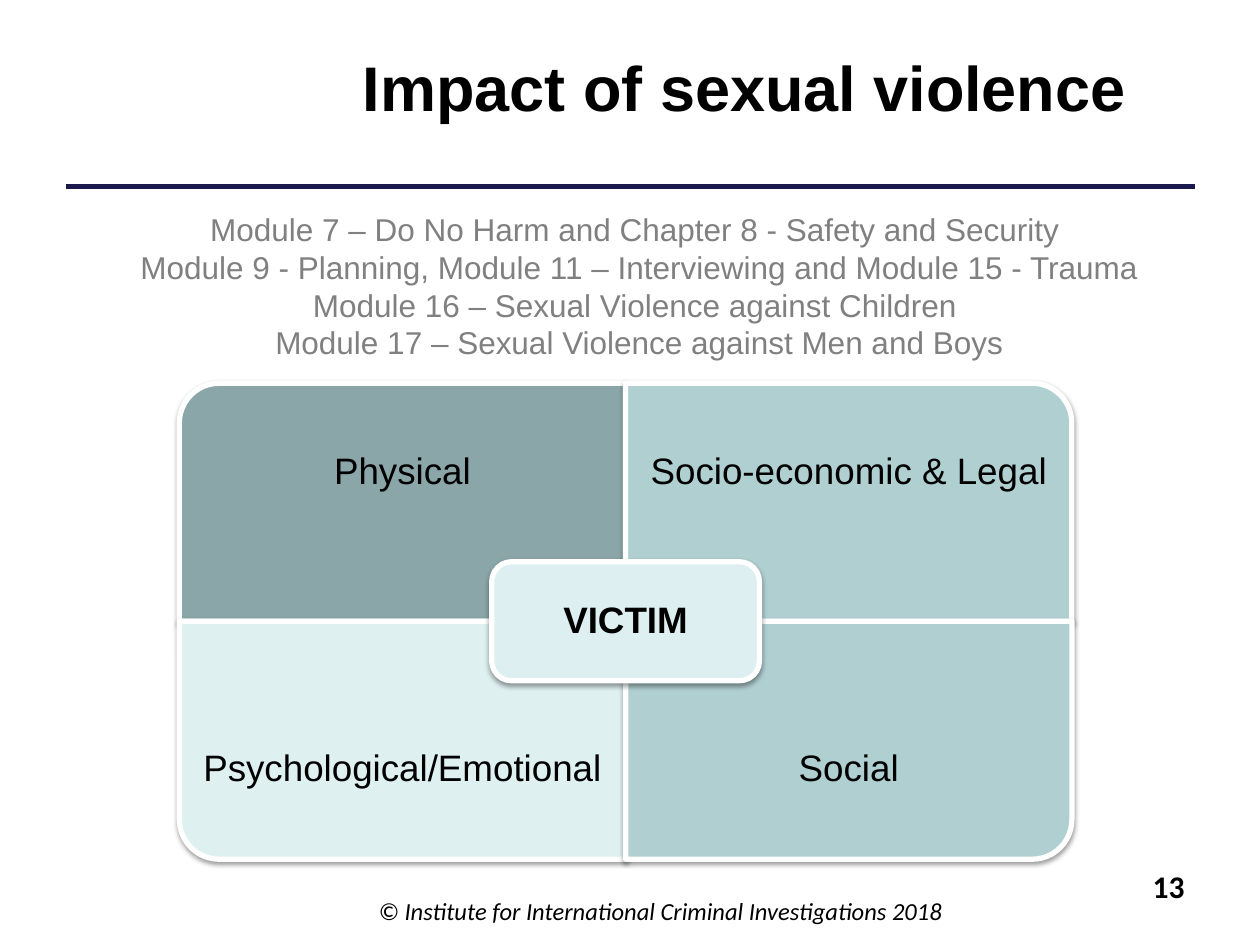
from lxml import etree
from pptx import Presentation
from pptx.dml.color import RGBColor
from pptx.enum import shapes, text
from pptx.oxml import parse_xml
from pptx.oxml.ns import nsdecls, qn
from pptx.util import Pt

BLACK = RGBColor(0x00, 0x00, 0x00)
WHITE = RGBColor(0xFF, 0xFF, 0xFF)
GREY = RGBColor(0x80, 0x80, 0x80)
NAVY = RGBColor(0x19, 0x19, 0x4D)
SLATE = RGBColor(0x8A, 0xA6, 0xA8)
TEAL = RGBColor(0xB0, 0xCF, 0xD1)
PALE = RGBColor(0xDF, 0xF0, 0xF1)
CENTRE_FILL = RGBColor(0xDD, 0xEF, 0xF0)

CENTER, RIGHT = text.PP_ALIGN.CENTER, text.PP_ALIGN.RIGHT
MIDDLE = text.MSO_ANCHOR.MIDDLE

MODULES = [
    "Module 7 – Do No Harm and Chapter 8 - Safety and Security ",
    "Module 9 - Planning, Module 11 – Interviewing and Module 15 - Trauma",
    "Module 16 – Sexual Violence against Children ",
    "Module 17 – Sexual Violence against Men and Boys",
]
QUADRANTS = [
    ("Physical", SLATE, 0, 0, 270),
    ("Socio-economic & Legal", TEAL, 1, 0, 0),
    ("Psychological/Emotional", PALE, 0, 1, 180),
    ("Social", TEAL, 1, 1, 90),
]


def write(tf, lines, size, font="Arial", color=BLACK, bold=False,
          italic=False, align=CENTER, spacing=None):
    tf.word_wrap = True
    for i, line in enumerate(lines):
        p = tf.paragraphs[0] if i == 0 else tf.add_paragraph()
        p.alignment = align
        p.line_spacing = spacing
        r = p.add_run()
        r.text = line
        f = r.font
        f.name, f.size, f.bold, f.italic = font, Pt(size), bold, italic
        f.color.rgb = color


def set_insets(tf, inset):
    tf.margin_left = tf.margin_right = Pt(inset)
    tf.margin_top = tf.margin_bottom = Pt(inset)


def add_text(s, box, lines, size, **style):
    tf = s.shapes.add_textbox(*map(Pt, box)).text_frame
    write(tf, lines, size, **style)
    return tf


def add_card(s, kind, box, fill):
    sp = s.shapes.add_shape(kind, *map(Pt, box))
    sp.fill.solid()
    sp.fill.fore_color.rgb = fill
    sp.line.color.rgb = WHITE
    sp.line.width = Pt(3)
    sp.shadow.inherit = False
    effects = sp._element.spPr.find(qn("a:effectLst"))
    effects.append(parse_xml(
        f'<a:outerShdw {nsdecls("a")} blurRad="{Pt(3.1)}" dist="{Pt(1.6)}" '
        'dir="5400000" rotWithShape="0"><a:srgbClr val="000000">'
        '<a:alpha val="38000"/></a:srgbClr></a:outerShdw>'))
    return sp


def add_header(s, box):
    x, y, w, h = box
    title = s.shapes.title
    title.left, title.top = Pt(x + 129), Pt(y)
    title.width, title.height = Pt(517), Pt(50)
    title.text_frame.vertical_anchor = MIDDLE
    write(title.text_frame, ["Impact of sexual violence"], 36, bold=True)
    rule = s.shapes.add_connector(shapes.MSO_CONNECTOR.STRAIGHT,
                                  Pt(x), Pt(y + h), Pt(x + w), Pt(y + h))
    rule.line.color.rgb = NAVY
    rule.line.width = Pt(2.5)
    etree.SubElement(rule._element.spPr, qn("a:effectLst"))


def add_matrix(s, box):
    x, y, w, h = box
    cw, ch = w / 2, h / 2
    label_h = ch * 0.75
    for label, fill, col, row, angle in QUADRANTS:
        left, top = x + col * cw, y + row * ch
        sw, sh = (ch, cw) if angle % 180 else (cw, ch)
        card = (left + (cw - sw) / 2, top + (ch - sh) / 2, sw, sh)
        sp = add_card(s, shapes.MSO_SHAPE.ROUND_1_RECTANGLE, card, fill)
        sp.rotation = angle
        tf = add_text(s, (left, top + row * (ch - label_h), cw, label_h),
                      [label], 21, spacing=0.9)
        tf.vertical_anchor = MIDDLE
        set_insets(tf, 11.5)
    vw, vh = w * 0.3, h * 0.25
    sp = add_card(s, shapes.MSO_SHAPE.ROUNDED_RECTANGLE,
                  (x + (w - vw) / 2, y + (h - vh) / 2, vw, vh), CENTRE_FILL)
    tf = sp.text_frame
    tf.vertical_anchor = MIDDLE
    set_insets(tf, 6.5)
    write(tf, ["VICTIM"], 21, bold=True, spacing=0.9)


def add_footer(s, box):
    x, y, w, h = box
    add_text(s, (x, y + 16.5, 363, 21),
             ["© Institute for International Criminal Investigations 2018"],
             14, font="Calibri", italic=True)
    add_text(s, (x + w - 40, y, 40, h), ["13"], 18,
             font="Calibri", bold=True, align=RIGHT)


def main():
    prs = Presentation()
    prs.slide_width, prs.slide_height = Pt(720), Pt(540)
    s = prs.slides.add_slide(prs.slide_layouts[5])
    add_header(s, (38, 24.5, 645, 82))
    add_footer(s, (196, 492, 488, 37.5))
    add_text(s, (36.5, 116.5, 657.5, 116.5), MODULES, 18, color=GREY)
    add_matrix(s, (102.5, 219, 510, 272))
    prs.save("out.pptx")


if __name__ == "__main__":
    main()
